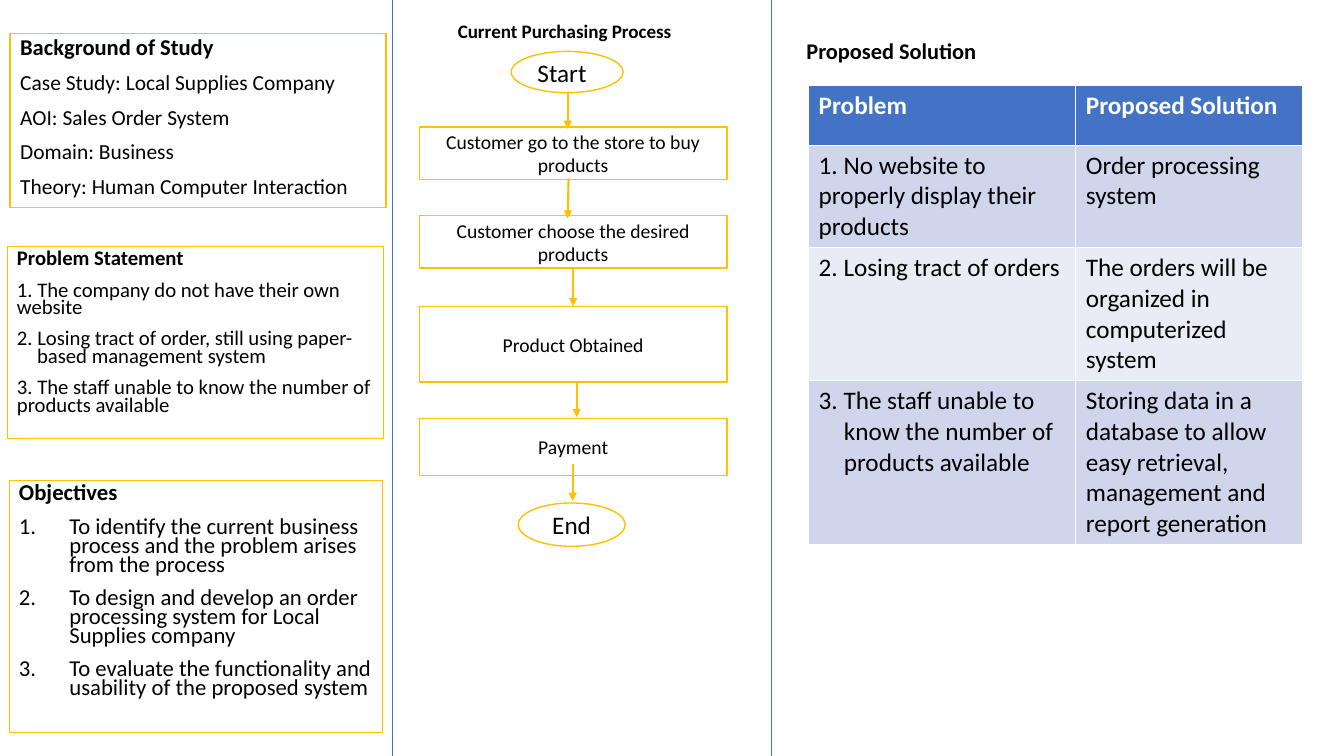
"""Build a slide with a study background, a purchasing flowchart and a table of solutions."""
from dataclasses import dataclass
from typing import Optional

from lxml import etree
from pptx import Presentation
from pptx.dml.color import RGBColor
from pptx.enum.shapes import MSO_CONNECTOR, MSO_SHAPE
from pptx.enum.text import MSO_ANCHOR, MSO_AUTO_SIZE, PP_ALIGN
from pptx.oxml.ns import qn
from pptx.util import Inches, Pt

RECTANGLE, ELLIPSE = MSO_SHAPE.RECTANGLE, MSO_SHAPE.OVAL
STRAIGHT = MSO_CONNECTOR.STRAIGHT
TOP, MIDDLE = MSO_ANCHOR.TOP, MSO_ANCHOR.MIDDLE
LEFT, CENTER = PP_ALIGN.LEFT, PP_ALIGN.CENTER
NO_AUTOFIT, GROW = MSO_AUTO_SIZE.NONE, MSO_AUTO_SIZE.SHAPE_TO_FIT_TEXT

BLACK = RGBColor(0x00, 0x00, 0x00)
WHITE = RGBColor(0xFF, 0xFF, 0xFF)
GOLD = RGBColor(0xFF, 0xC0, 0x00)
BLUE = RGBColor(0x44, 0x72, 0xC4)
BAND_DARK = RGBColor(0xCF, 0xD5, 0xEA)
BAND_LIGHT = RGBColor(0xE9, 0xEB, 0xF5)

TOP_SIDE, BOTTOM_SIDE = 0, 2


@dataclass(frozen=True)
class Line:
    text: str
    size: float
    bold: bool = False
    hanging: float = 0
    numbered: bool = False
    color: RGBColor = BLACK


@dataclass(frozen=True)
class Panel:
    left: float
    top: float
    width: float
    height: float
    spacing: float
    lines: tuple[Line, ...]


@dataclass(frozen=True)
class Step:
    text: str
    kind: int
    left: float
    top: float
    width: float
    height: float
    size: float = 14
    align: int = CENTER


@dataclass(frozen=True)
class Arrow:
    start: tuple[float, float]
    end: tuple[float, float]
    source: Optional[str] = None
    target: Optional[str] = None


BACKGROUND = Panel(0.1, 0.33, 3.73, 1.73, 0.8, (
    Line("Background of Study", 16.1, True),
    Line("Case Study: Local Supplies Company", 15.3),
    Line("AOI: Sales Order System", 15.3),
    Line("Domain: Business", 15.3),
    Line("Theory: Human Computer Interaction", 15.3),
))
PANELS = (
    Panel(0.07, 2.45, 3.73, 1.9, 0.7, (
        Line("Problem Statement", 14.8, True),
        Line("1. The company do not have their own website", 14.8),
        Line("2. Losing tract of order, still using paper-based management system", 14.8, hanging=0.2),
        Line("3. The staff unable to know the number of products available", 14.8),
    )),
    Panel(0.09, 4.77, 3.7, 2.5, 0.7, (
        Line("Objectives", 16.2, True),
        Line("To identify the current business process and the problem arises from the process",
             16.2, hanging=0.5, numbered=True),
        Line("To design and develop an order processing system for Local Supplies company",
             16.2, hanging=0.5, numbered=True),
        Line("To evaluate the functionality and usability of the proposed system",
             16.2, hanging=0.5, numbered=True),
    )),
)
HEADING = Panel(4.44, 0.19, 2.48, 0.42, 0.8, (Line("Current Purchasing Process", 13.6, True),))
STEPS = (
    Step("Start", ELLIPSE, 5.07, 0.51, 1.11, 0.41, 18, LEFT),
    Step("Customer go to the store to buy products", RECTANGLE, 4.16, 1.26, 3.05, 0.52),
    Step("Customer choose the desired products", RECTANGLE, 4.16, 2.14, 3.05, 0.52),
    Step("Product Obtained", RECTANGLE, 4.16, 3.04, 3.05, 0.75),
    Step("Payment", RECTANGLE, 4.16, 4.15, 3.05, 0.57),
    Step("End", ELLIPSE, 5.14, 4.99, 1.06, 0.43, 18),
)
ARROWS = (
    Arrow((5.63, 0.92), (5.63, 1.28)),
    Arrow((5.64, 1.77), (5.63, 2.17)),
    Arrow((5.68, 2.66), (5.68, 3.04), "Customer choose the desired products", "Product Obtained"),
    Arrow((5.72, 3.78), (5.72, 4.14)),
    Arrow((5.68, 4.6), (5.68, 4.97)),
)
DIVIDERS = (Arrow((3.89, 0), (3.89, 7.5)), Arrow((7.65, 0), (7.65, 7.5)))
COLUMN_WIDTHS = (2.65, 2.25)
ROW_HEIGHTS = (0.59, 1.01, 1.32, 1.62)
ROW_FILLS = (BLUE, BAND_DARK, BAND_LIGHT, BAND_DARK)
TABLE_ROWS = (
    (Line("Problem", 18, True, color=WHITE), Line("Proposed Solution", 18, True, color=WHITE)),
    (Line("1. No website to properly display their products", 18), Line("Order processing system", 18)),
    (Line("2. Losing tract of orders", 18, hanging=0.25),
     Line("The orders will be organized in computerized system", 18)),
    (Line("3. The staff unable to know the number of products available", 18, hanging=0.25),
     Line("Storing data in a database to allow easy retrieval, management and report generation", 18)),
)


def apply_format(target: object, values: dict) -> None:
    for name, value in values.items():
        setattr(target, name, value)


def write_lines(frame, lines: tuple[Line, ...], align: int = LEFT, spacing: float = 1, before: float = 0) -> None:
    for index, line in enumerate(lines):
        para = frame.add_paragraph() if index else frame.paragraphs[0]
        apply_format(para, {"alignment": align, "line_spacing": spacing, "space_before": Pt(before)})
        properties = para._p.get_or_add_pPr()
        properties.set("marL", str(Inches(line.hanging)))
        properties.set("indent", str(-Inches(line.hanging)))
        if line.numbered:
            etree.SubElement(properties, qn("a:buAutoNum"), type="arabicPeriod")
        else:
            etree.SubElement(properties, qn("a:buNone"))
        span = para.add_run()
        span.text = line.text
        apply_format(span.font, {"name": "Calibri", "size": Pt(line.size), "bold": line.bold})
        span.font.color.rgb = line.color


def outline(box, width: float) -> None:
    box.line.color.rgb = GOLD
    box.line.width = Pt(width)


def fill_panel(box, panel: Panel) -> None:
    apply_format(box, {name: Inches(getattr(panel, name)) for name in ("left", "top", "width", "height")})
    apply_format(box.text_frame, {"word_wrap": True, "auto_size": NO_AUTOFIT, "vertical_anchor": TOP})
    write_lines(box.text_frame, panel.lines, LEFT, panel.spacing, 10)


def add_box(page, kind: int, left: float, top: float, width: float, height: float):
    box = page.shapes.add_shape(kind, Inches(left), Inches(top), Inches(width), Inches(height))
    box.shadow.inherit = False
    return box


def add_step(page, step: Step):
    box = add_box(page, step.kind, step.left, step.top, step.width, step.height)
    box.fill.solid()
    box.fill.fore_color.rgb = WHITE
    outline(box, 1)
    apply_format(box.text_frame, {"word_wrap": True, "vertical_anchor": MIDDLE})
    write_lines(box.text_frame, (Line(step.text, step.size),), step.align)
    return box


def add_line(page, arrow: Arrow, color: RGBColor, width: float, boxes: dict, head: bool) -> None:
    line = page.shapes.add_connector(STRAIGHT, *map(Inches, arrow.start + arrow.end))
    if arrow.source:
        line.begin_connect(boxes[arrow.source], BOTTOM_SIDE)
    if arrow.target:
        line.end_connect(boxes[arrow.target], TOP_SIDE)
    line.line.color.rgb = color
    line.line.width = Pt(width)
    if head:
        etree.SubElement(line.line._get_or_add_ln(), qn("a:tailEnd"), type="triangle")
    etree.SubElement(line._element.spPr, qn("a:effectLst"))


def add_solutions(page) -> None:
    frame = page.shapes.add_table(len(ROW_HEIGHTS), len(COLUMN_WIDTHS), Inches(8.02), Inches(0.85),
                                  Inches(sum(COLUMN_WIDTHS)), Inches(sum(ROW_HEIGHTS)))
    for column, width in zip(frame.table.columns, COLUMN_WIDTHS):
        column.width = Inches(width)
    for row, height, color, lines in zip(frame.table.rows, ROW_HEIGHTS, ROW_FILLS, TABLE_ROWS):
        row.height = Inches(height)
        for cell, line in zip(row.cells, lines):
            cell.fill.solid()
            cell.fill.fore_color.rgb = color
            write_lines(cell.text_frame, (line,))


def main() -> None:
    deck = Presentation()
    apply_format(deck, {"slide_width": Inches(13.33), "slide_height": Inches(7.5)})
    page = deck.slides.add_slide(deck.slide_layouts[1])
    fill_panel(page.shapes.title, HEADING)
    body = page.placeholders[1]
    fill_panel(body, BACKGROUND)
    outline(body, 1)
    for panel in PANELS:
        box = add_box(page, RECTANGLE, panel.left, panel.top, panel.width, panel.height)
        box.fill.background()
        outline(box, 0.75)
        fill_panel(box, panel)
    boxes = {step.text: add_step(page, step) for step in STEPS}
    for arrow in ARROWS:
        add_line(page, arrow, GOLD, 1.5, boxes, True)
    for divider in DIVIDERS:
        add_line(page, divider, BLUE, 0.5, boxes, False)
    add_solutions(page)
    caption = page.shapes.add_textbox(Inches(7.9), Inches(0.32), Inches(1.91), Inches(0.37))
    apply_format(caption.text_frame, {"word_wrap": False, "auto_size": GROW})
    write_lines(caption.text_frame, (Line("Proposed Solution", 16, True),))
    deck.save("out.pptx")


if __name__ == "__main__":
    main()
